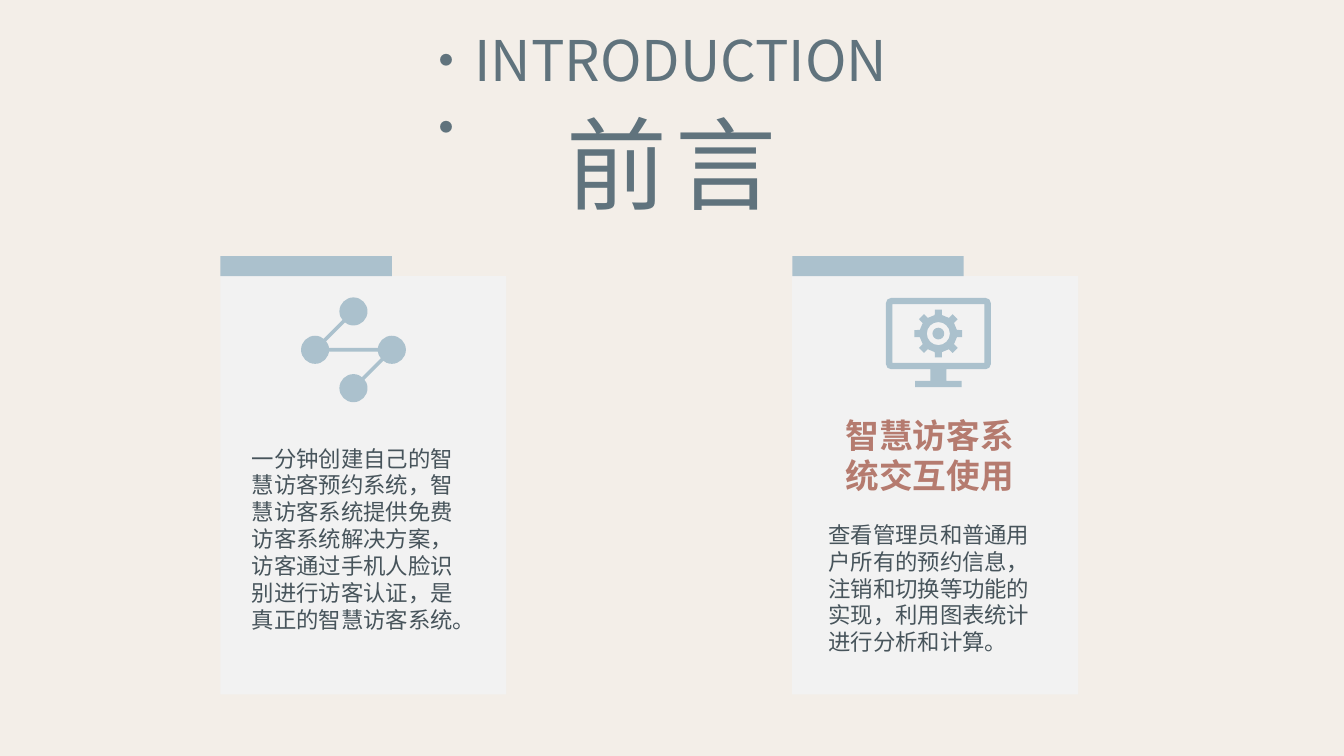
from dataclasses import dataclass
from math import cos, hypot, radians, sin, sqrt

from lxml.etree import Element, SubElement
from pptx import Presentation
from pptx.dml.color import RGBColor as RGB
from pptx.enum.lang import MSO_LANGUAGE_ID as LANG
from pptx.enum.shapes import MSO_SHAPE as SHAPE
from pptx.enum.text import MSO_AUTO_SIZE as FIT, PP_ALIGN as ALIGN
from pptx.oxml.ns import qn
from pptx.util import Inches, Pt


@dataclass(frozen=True)
class Theme:
    font: str = "Noto Sans CJK SC"
    background: str = "F3EEE8"
    title: str = "60737D"
    panel: str = "F2F2F2"
    accent: str = "ABC1CD"
    heading: str = "B57B6F"
    body: str = "47545B"
    label_size: int = 40
    title_size: int = 72
    heading_size: int = 24
    body_size: int = 16


def polar(radius, angle):
    return radius * cos(radians(angle)), radius * sin(radians(angle))


def arc(cx, cy, radius, start=0, quarters=4):
    x, y = polar(radius, start)
    items = [(cx + x, cy + y)]
    pull = 0.55
    for _ in range(quarters):
        end_x, end_y = -y, x
        items.append((cx + x - pull * y, cy + y + pull * x,
                      cx + end_x + pull * end_y, cy + end_y - pull * end_x,
                      cx + end_x, cy + end_y))
        x, y = end_x, end_y
    return items


def bar(a, b, radius, half):
    (ax, ay), (bx, by) = a, b
    length = hypot(bx - ax, by - ay)
    ux, uy = (bx - ax) / length, (by - ay) / length
    inset = sqrt(radius**2 - half**2)
    ends = [(inset, half), (length - inset, half), (length - inset, -half), (inset, -half)]
    return [(ax + ux * d - uy * w, ay + uy * d + ux * w) for d, w in ends]


def share_icon():
    radius = 13.4
    reach = 50 - radius
    nodes = [(0, -reach), (-reach, 0), (reach, 0), (0, reach)]
    discs = [arc(x, y, radius) for x, y in nodes]
    return discs + [bar(a, b, radius, 1.7) for a, b in zip(nodes, nodes[1:])]


def gear(root, tip, teeth=8):
    profile = [(root, -11), (tip, -8.5), (tip, 8.5), (root, 11)]
    return [polar(r, a + 360 * k / teeth) for k in range(teeth) for r, a in profile]


def monitor_icon():
    w, h, r = 50, 34, 4.8
    stand = [(7.7, h), (7.7, 45.2), (22.1, 45.2), (22.1, 51.2)]
    outline = arc(w - r, r - h, r, -90, 1) + arc(w - r, h - r, r, 0, 1)
    outline += stand + [(-x, y) for x, y in reversed(stand)]
    outline += arc(r - w, h - r, r, 90, 1) + arc(r - w, r - h, r, 180, 1)
    screen = [(-43.8, -28), (43.8, -28), (43.8, 28), (-43.8, 28)]
    return [outline, screen, gear(18, 23), arc(0, 0, 11), arc(0, 0, 5.6)]


class Deck:
    def __init__(self, theme):
        self.theme = theme
        self.prs = Presentation()
        self.prs.slide_width, self.prs.slide_height = Inches(13.33), Inches(7.5)
        self.s = self.prs.slides.add_slide(self.prs.slide_layouts[6])
        fill = self.s.background.fill
        fill.solid()
        fill.fore_color.rgb = RGB.from_string(theme.background)

    def x(self, share):
        return round(self.prs.slide_width * share / 100)

    def y(self, share):
        return round(self.prs.slide_height * share / 100)

    def box(self, left, top, width, height):
        return self.x(left), self.y(top), self.x(width), self.y(height)

    def paint(self, sp, color):
        sp.shadow.inherit = False
        sp.fill.solid()
        sp.fill.fore_color.rgb = RGB.from_string(color)
        sp.line.fill.background()

    def rect(self, shapes, area, color):
        self.paint(shapes.add_shape(SHAPE.RECTANGLE, *self.box(*area)), color)

    def icon(self, shapes, center, contours, width=7.8):
        fine = 100
        contours = [[[round(v * fine) for v in item] for item in c] for c in contours]
        anchors = [[item[-2:] for item in c] for c in contours]
        first, *rest = anchors
        builder = shapes.build_freeform(*first[0], scale=self.x(width) / (100 * fine))
        builder.add_line_segments(first[1:], close=True)
        for contour in rest:
            builder.move_to(*contour[0])
            builder.add_line_segments(contour[1:], close=True)
        sp = builder.convert_to_shape(self.x(center[0]), self.y(center[1]))
        self.bend(sp, contours, [min(axis) for axis in zip(*sum(anchors, []))])
        self.paint(sp, self.theme.accent)

    def bend(self, sp, contours, corner):
        items = [item for c in contours for item in c[1:]]
        for line, item in zip(list(sp._element.iter(qn("a:lnTo"))), items):
            if len(item) == 6:
                line.tag = qn("a:cubicBezTo")
                for i in (0, 2):
                    pt = Element(qn("a:pt"))
                    pt.set("x", str(item[i] - corner[0]))
                    pt.set("y", str(item[i + 1] - corner[1]))
                    line.insert(i // 2, pt)

    def card(self, left, center, contours):
        shapes = self.s.shapes.add_group_shape().shapes
        self.rect(shapes, (left, 36.53, 21.27, 55.33), self.theme.panel)
        self.rect(shapes, (left, 33.87, 12.75, 2.67), self.theme.accent)
        self.icon(shapes, center, contours)

    def text(self, area, words, size, color, bold=False, align=None, spacing=0, inset=True):
        tf = self.s.shapes.add_textbox(*self.box(*area)).text_frame
        tf.word_wrap = True
        tf.auto_size = FIT.SHAPE_TO_FIT_TEXT
        if not inset:
            tf.margin_left = tf.margin_right = tf.margin_top = tf.margin_bottom = 0
        tf.text = words
        p = tf.paragraphs[0]
        p.alignment = align
        r = p.runs[0]
        r.font.size, r.font.bold, r.font.name = Pt(size), bold, self.theme.font
        r.font.color.rgb = RGB.from_string(color)
        r.font.language_id = LANG.SIMPLIFIED_CHINESE
        props = r._r.get_or_add_rPr()
        SubElement(props, qn("a:ea")).set("typeface", self.theme.font)
        if spacing:
            props.set("spc", str(spacing * 100))


def main():
    t = Theme()
    deck = Deck(t)
    deck.text((30.4, 2.67, 39.15, 10.27), "·INTRODUCTION·", t.label_size, t.title,
              align=ALIGN.JUSTIFY)
    deck.text((36.6, 13.47, 26.7, 16.13), "前言", t.title_size, t.title,
              align=ALIGN.CENTER, spacing=6, inset=False)
    deck.card(16.4, (26.3, 46.27), share_icon())
    deck.text((18, 58.17, 16.58, 26.53),
              "一分钟创建自己的智慧访客预约系统，智慧访客系统提供免费访客系统解决方案，"
              "访客通过手机人脸识别进行访客认证，是真正的智慧访客系统。",
              t.body_size, t.body)
    deck.card(58.95, (69.82, 44.13), monitor_icon())
    deck.text((62.18, 54.2, 14.78, 12.13), "智慧访客系统交互使用",
              t.heading_size, t.heading, bold=True)
    deck.text((60.9, 68.25, 17.85, 19.33),
              "查看管理员和普通用户所有的预约信息，注销和切换等功能的实现，"
              "利用图表统计进行分析和计算。",
              t.body_size, t.body)
    deck.prs.save("out.pptx")


if __name__ == "__main__":
    main()
